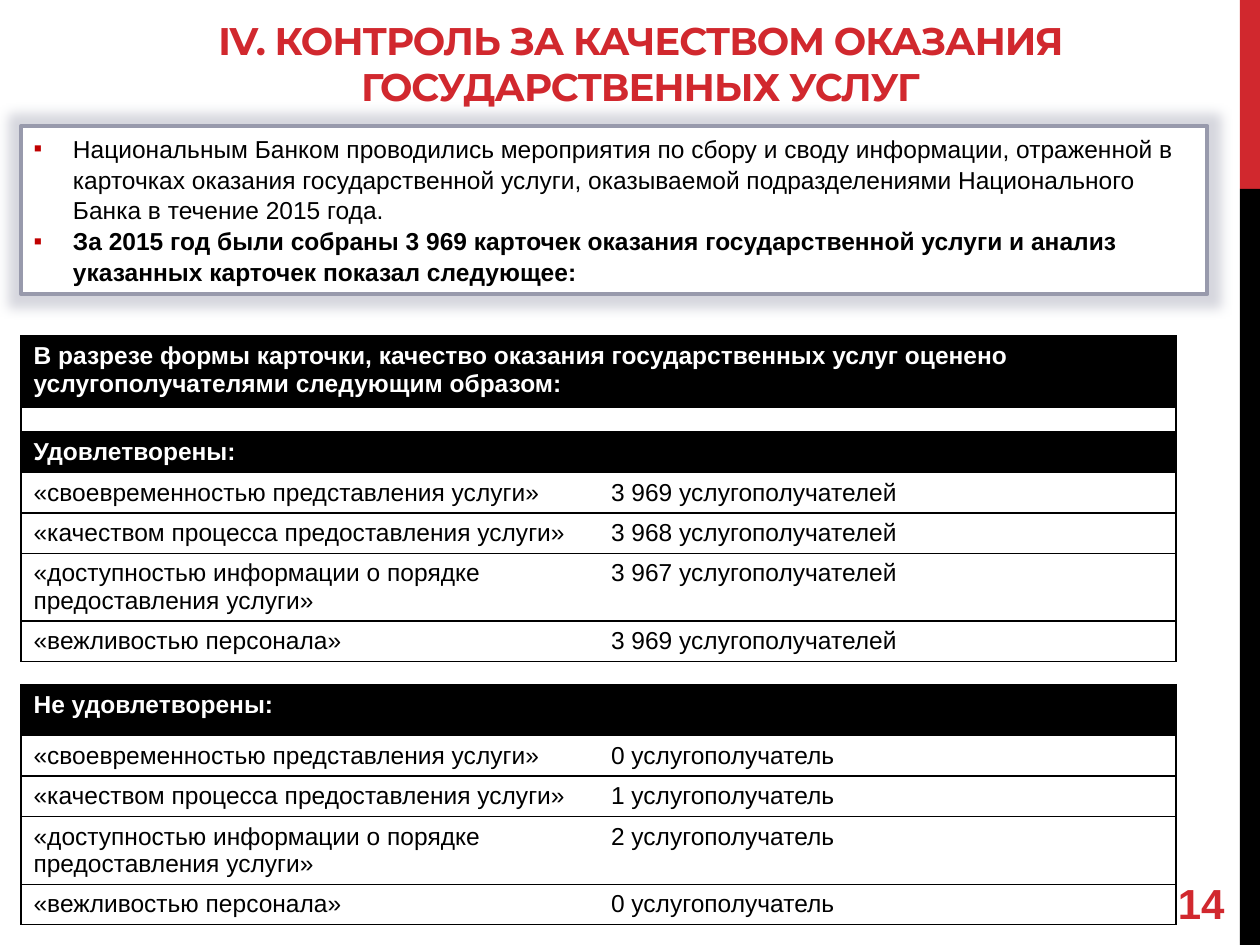
from lxml import etree
from pptx import Presentation
from pptx import util as u
from pptx.dml.color import RGBColor
from pptx.enum import shapes, text
from pptx.oxml import ns

Pt = u.Pt
COLORS = {"red": "D1282E", "black": "000000", "white": "FFFFFF",
          "frame": "989AAC", "bullet": "C00000"}
BODY = {"name": "Arial", "size": Pt(14), "bold": False}
BOLD = {**BODY, "bold": True}
TITLE = {"name": "Montserrat", "size": Pt(22), "bold": True}
NUMBER = {"name": "Arial", "size": Pt(24), "bold": True}

CRITERIA = ["«своевременностью представления услуги»",
            "«качеством процесса предоставления услуги»",
            "«доступностью информации о порядке предоставления услуги»",
            "«вежливостью персонала»"]
CRITERIA_HEIGHTS = [23.1, 23.1, 38.8, 23.1]


def rgb(key):
    return RGBColor.from_string(COLORS[key])


def sub(parent, tag, **attrs):
    return etree.SubElement(parent, ns.qn(tag), attrs)


def style(font, fmt, color):
    for name, value in fmt.items():
        setattr(font, name, value)
    font.color.rgb = rgb(color)


def write(p, words, fmt, color):
    r = p.add_run()
    r.text = words
    style(r.font, fmt, color)
    return r


def place(sp, box):
    for name, value in zip(("left", "top", "width", "height"), box):
        setattr(sp, name, Pt(value))


def add_side_bar(slide, box):
    x, y, w, h = box
    split = h / 5
    for top, height, color in ((y, split, "red"), (y + split, h - split, "black")):
        sp = slide.shapes.add_shape(shapes.MSO_SHAPE.RECTANGLE,
                                    Pt(x), Pt(top), Pt(w), Pt(height))
        sp.shadow.inherit = False
        sp.fill.solid()
        sp.fill.fore_color.rgb = rgb(color)
        sp.line.fill.background()


def add_title(slide, box, words):
    sp = slide.shapes.title
    place(sp, box)
    tf = sp.text_frame
    tf.auto_size = text.MSO_AUTO_SIZE.NONE
    tf.vertical_anchor = text.MSO_ANCHOR.BOTTOM
    p = tf.paragraphs[0]
    p.alignment = text.PP_ALIGN.CENTER
    p.line_spacing = 1.0
    r = write(p, words, TITLE, "red")
    r.font._element.set("spc", "-60")


def add_findings(slide, box, items):
    sp = slide.placeholders[1]
    place(sp, box)
    sp.fill.solid()
    sp.fill.fore_color.rgb = rgb("white")
    sp.line.color.rgb = rgb("frame")
    sp.line.width = Pt(2.25)
    effects = sub(sp._element.spPr, "a:effectLst")
    glow = sub(effects, "a:glow", rad=str(Pt(14)))
    color = sub(glow, "a:srgbClr", val=COLORS["frame"])
    sub(color, "a:alpha", val="40000")
    tf = sp.text_frame
    tf.auto_size = text.MSO_AUTO_SIZE.NONE
    tf.vertical_anchor = text.MSO_ANCHOR.TOP
    for i, (words, fmt) in enumerate(items):
        p = tf.add_paragraph() if i else tf.paragraphs[0]
        p.space_before = p.space_after = Pt(0)
        p.line_spacing = 1.05
        write(p, words, fmt, "black")
        pPr = p._p.get_or_add_pPr()
        pPr.set("marL", str(Pt(22.5)))
        pPr.set("indent", str(Pt(-22.5)))
        sub(sub(pPr, "a:buClr"), "a:srgbClr", val=COLORS["bullet"])
        sub(pPr, "a:buFont", typeface="Arial")
        sub(pPr, "a:buChar", char="▪")


def set_borders(cell, sides):
    tcPr = cell._tc.get_or_add_tcPr()
    for side in "LRTB":
        if side in sides:
            ln = sub(tcPr, f"a:ln{side}", w=str(Pt(1)))
            sub(sub(ln, "a:solidFill"), "a:srgbClr", val=COLORS["black"])
        else:
            sub(sub(tcPr, f"a:ln{side}", w="0"), "a:noFill")


def fill_cell(cell, words, sides, dark):
    set_borders(cell, sides)
    cell.fill.solid()
    cell.fill.fore_color.rgb = rgb("black" if dark else "white")
    p = cell.text_frame.paragraphs[0]
    if words:
        write(p, words, BOLD if dark else BODY, "white" if dark else "black")
    elif not cell.is_spanned:
        cell.margin_top = cell.margin_bottom = 0
        sub(p._p, "a:endParaRPr", sz="800")


def add_ratings(slide, box, heads, counts, unit):
    x, y, w = box
    rows = [(height, (words, "")) for height, words in heads]
    rows += [(height, (name, f"{count} {unit}"))
             for height, name, count in zip(CRITERIA_HEIGHTS, CRITERIA, counts)]
    total = sum(height for height, _ in rows)
    table = slide.shapes.add_table(len(rows), 2, Pt(x), Pt(y), Pt(w), Pt(total)).table
    table.first_row = table.horz_banding = False
    for col in table.columns:
        col.width = Pt(w / 2)
    for i, (height, values) in enumerate(rows):
        table.rows[i].height = Pt(height)
        left, right = table.cell(i, 0), table.cell(i, 1)
        is_head = i < len(heads)
        if is_head:
            left.merge(right)
        dark = is_head and bool(values[0])
        fill_cell(left, values[0], "LRTB" if is_head else "LTB", dark)
        fill_cell(right, values[1], "RTB", dark)


def add_page_number(slide, box, number):
    sp = slide.shapes.add_textbox(*(Pt(v) for v in box))
    tf = sp.text_frame
    tf.word_wrap = True
    tf.vertical_anchor = text.MSO_ANCHOR.MIDDLE
    write(tf.paragraphs[0], number, NUMBER, "red")


def main():
    prs = Presentation()
    prs.slide_width, prs.slide_height = Pt(720), Pt(540)
    slide = prs.slides.add_slide(prs.slide_layouts[1])
    add_side_bar(slide, (708.5, 0, 11.5, 540))
    add_title(slide, (42, 12, 648, 54),
              "IV. КОНТРОЛЬ ЗА КАЧЕСТВОМ ОКАЗАНИЯ ГОСУДАРСТВЕННЫХ УСЛУГ")
    add_findings(slide, (12, 72, 678, 96), [
        ("Национальным Банком проводились мероприятия по сбору и своду информации, "
         "отраженной в карточках оказания государственной услуги, оказываемой "
         "подразделениями Национального Банка в течение 2015 года.", BODY),
        ("За 2015 год были собраны 3 969 карточек оказания государственной услуги "
         "и анализ указанных карточек показал следующее:", BOLD)])
    add_ratings(slide, (12, 192, 660), [
        (40.8, "В разрезе формы карточки, качество оказания государственных услуг "
               "оценено услугополучателями следующим образом:"),
        (14.2, ""),
        (23.1, "Удовлетворены:")],
        ["3 969", "3 968", "3 967", "3 969"], "услугополучателей")
    add_ratings(slide, (12, 391.2, 660), [(29.2, "Не удовлетворены:")],
                [0, 1, 2, 0], "услугополучатель")
    add_page_number(slide, (666, 498, 48, 36), "14")
    prs.save("out.pptx")


if __name__ == "__main__":
    main()
